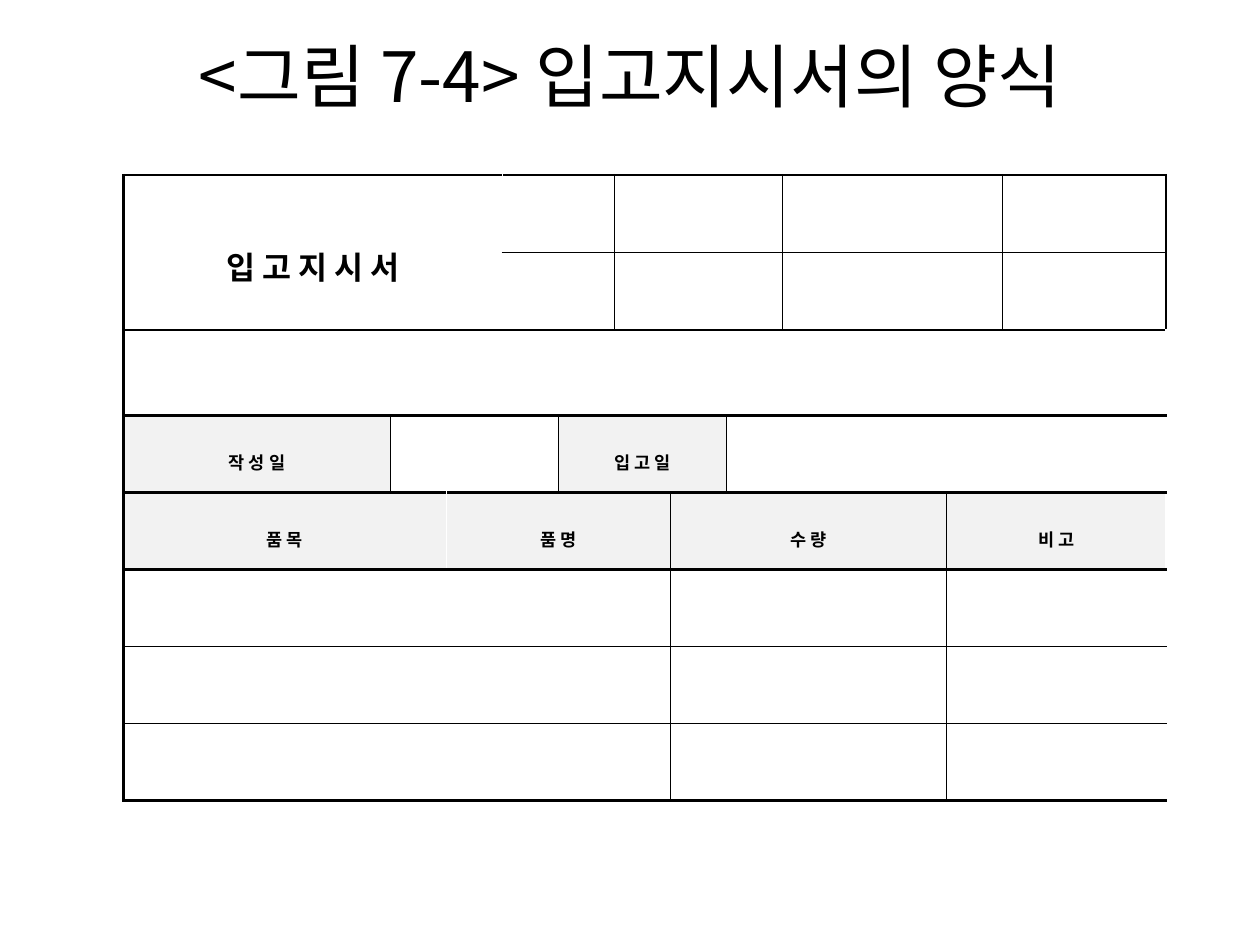
from dataclasses import dataclass

from lxml.etree import SubElement
from pptx import Presentation
from pptx.dml.color import RGBColor
from pptx.enum.text import MSO_ANCHOR, PP_ALIGN
from pptx.oxml.ns import qn
from pptx.table import Table, _Cell
from pptx.text.text import _Paragraph
from pptx.util import Cm, Pt

COLORS = {"ink": "000000", "label": "F2F2F2"}
FONT = "Noto Sans CJK KR"
THIN, THICK, HEADER_RULE = 0.28, 1.7, 1.98

# Form grid: sizes in cm, rule weights in points
COLUMN_WIDTHS = [5.38] + [1.13] * 7 + [3.3, 1.13, 3.3]
ROW_HEIGHTS = [1.55, 1.55, 1.73] + [1.55] * 5
ROW_RULES = [THICK, THIN, THICK, THICK, THICK, HEADER_RULE, THIN, THIN, THICK]
COLUMN_RULES = [THICK] + [THIN] * 10 + [THICK]


@dataclass
class Block:
    """A form field covering one or more grid cells."""
    row: int
    column: int
    columns: int
    rows: int = 1
    text: str = ""
    size: float = 10
    shaded: bool = False


def field_row(row: int, first: int, spans: list[int],
              labels: tuple[str, ...] = ()) -> list[Block]:
    """Lay fields side by side; fields with a label are shaded."""
    texts = labels or ("",) * len(spans)
    return [Block(row, first + sum(spans[:index]), span, text=text, shaded=bool(text))
            for index, (span, text) in enumerate(zip(spans, texts))]


APPROVAL_SPANS = [2, 3, 2, 1]
DATE_SPANS = [1, 3, 3, 4]
ITEM_SPANS = [2, 4, 3, 2]

BLOCKS = [
    Block(0, 0, 3, rows=2, text="입 고 지 시 서", size=18),
    *field_row(0, 3, APPROVAL_SPANS),
    *field_row(1, 3, APPROVAL_SPANS),
    Block(2, 0, 11),
    *field_row(3, 0, DATE_SPANS, ("작 성 일", "", "입 고 일", "")),
    *field_row(4, 0, ITEM_SPANS, ("품 목", "품 명", "수 량", "비 고")),
    *[block for row in (5, 6, 7) for block in field_row(row, 0, ITEM_SPANS)],
]


def style_paragraph(paragraph: _Paragraph, size: float, bold: bool) -> None:
    paragraph.alignment = PP_ALIGN.CENTER
    font = paragraph.font
    font.name, font.size, font.bold = FONT, Pt(size), bold
    font.color.rgb = RGBColor.from_string(COLORS["ink"])
    # Hangul uses the East Asian typeface
    properties = paragraph._p.pPr.find(qn("a:defRPr"))
    SubElement(properties, qn("a:ea"), typeface=FONT)


def set_borders(cell: _Cell, weights: dict[str, float]) -> None:
    properties = cell._tc.get_or_add_tcPr()
    for position, (edge, weight) in enumerate(weights.items()):
        line = SubElement(properties, qn(f"a:{edge}"), w=str(Pt(weight)))
        fill = SubElement(line, qn("a:solidFill"))
        SubElement(fill, qn("a:srgbClr"), val=COLORS["ink"])
        properties.insert(position, line)


def draw_block(table: Table, block: Block) -> None:
    last_row = block.row + block.rows - 1
    last_column = block.column + block.columns - 1
    origin = table.cell(block.row, block.column)
    if (block.rows, block.columns) != (1, 1):
        origin.merge(table.cell(last_row, last_column))

    # Rules run along the outside of the block
    for row in range(block.row, last_row + 1):
        for column in range(block.column, last_column + 1):
            cell = table.cell(row, column)
            if block.shaded:
                cell.fill.solid()
                cell.fill.fore_color.rgb = RGBColor.from_string(COLORS["label"])
            else:
                cell.fill.background()
            weights = {}
            if column == block.column:
                weights["lnL"] = COLUMN_RULES[column]
            if column == last_column:
                weights["lnR"] = COLUMN_RULES[column + 1]
            if row == block.row:
                weights["lnT"] = ROW_RULES[row]
            if row == last_row:
                weights["lnB"] = ROW_RULES[row + 1]
            set_borders(cell, weights)

    if block.text:
        origin.vertical_anchor = MSO_ANCHOR.MIDDLE
        origin.margin_left = origin.margin_right = Cm(0.18)
        origin.margin_top = origin.margin_bottom = Cm(0.05)
        origin.text = block.text
        paragraph = origin.text_frame.paragraphs[0]
        paragraph.line_spacing = 1.6
        style_paragraph(paragraph, block.size, bold=True)


def main() -> None:
    presentation = Presentation()
    presentation.slide_width, presentation.slide_height = Cm(25.4), Cm(19.05)
    slide = presentation.slides.add_slide(presentation.slide_layouts[5])

    # Title
    title = slide.shapes.title
    title.left, title.top, title.width, title.height = Cm(1.27), Cm(0.76), Cm(22.86), Cm(3.18)
    title.text_frame.vertical_anchor = MSO_ANCHOR.MIDDLE
    title.text_frame.text = "<그림 7-4> 입고지시서의 양식\v"
    style_paragraph(title.text_frame.paragraphs[0], 39.6, bold=False)

    # Receiving order form
    frame = slide.shapes.add_table(len(ROW_HEIGHTS), len(COLUMN_WIDTHS), Cm(2.49), Cm(3.53),
                                   Cm(sum(COLUMN_WIDTHS)), Cm(sum(ROW_HEIGHTS)))
    table = frame.table
    table.first_row = table.horz_banding = False
    for column, width in zip(table.columns, COLUMN_WIDTHS):
        column.width = Cm(width)
    for row, height in zip(table.rows, ROW_HEIGHTS):
        row.height = Cm(height)
    for block in BLOCKS:
        draw_block(table, block)

    presentation.save("out.pptx")


if __name__ == "__main__":
    main()
